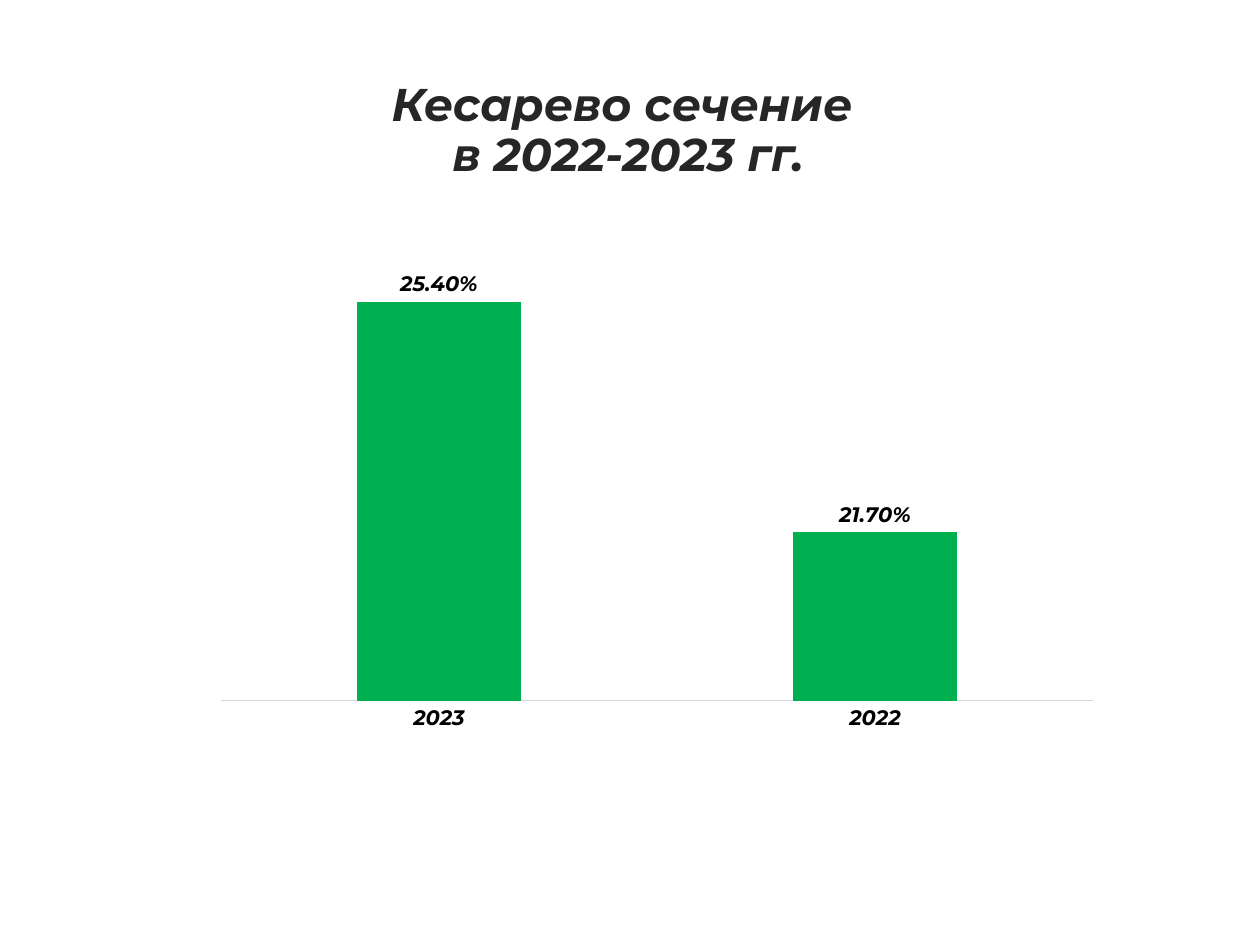
from dataclasses import dataclass

import pptx
import pptx.chart.data
import pptx.dml.color
import pptx.enum.chart
import pptx.enum.text
import pptx.util
from lxml import etree
from pptx.oxml.ns import qn


@dataclass(frozen=True)
class Theme:
    font: str = "Montserrat"
    title_color: str = "262626"
    label_color: str = "000000"
    bar_color: str = "00B050"
    axis_color: str = "D9D9D9"
    title_size: float = 26.2
    label_size: float = 12


@dataclass(frozen=True)
class Box:
    left: float
    top: float
    width: float
    height: float

    def lengths(self) -> list:
        return [pptx.util.Pt(value) for value in (self.left, self.top, self.width, self.height)]


@dataclass(frozen=True)
class YearRate:
    year: str
    rate: float


THEME = Theme()
TITLE_BOX = Box(99.4, 37.4, 519.1, 75.6)
CHART_BOX = Box(115.9, 145.4, 519.1, 277.2)
PLOT_FRACTIONS = {"x": 0.02, "y": 0.02, "w": 0.96, "h": 0.9}
RATES = [YearRate("2023", 0.254), YearRate("2022", 0.217)]


def rgb(color: str) -> pptx.dml.color.RGBColor:
    return pptx.dml.color.RGBColor.from_string(color)


def format_font(font, *, size: float, color: str) -> None:
    font.name = THEME.font
    font.size = pptx.util.Pt(size)
    font.bold = True
    font.italic = True
    font.color.rgb = rgb(color)


def add_text(slide, box: Box, text: str, *, size: float, color: str, line_spacing: float) -> None:
    shape = slide.shapes.add_textbox(*box.lengths())
    frame = shape.text_frame
    frame.word_wrap = True
    frame.vertical_anchor = pptx.enum.text.MSO_ANCHOR.MIDDLE
    paragraph = frame.paragraphs[0]
    paragraph.alignment = pptx.enum.text.PP_ALIGN.CENTER
    paragraph.line_spacing = line_spacing
    for index, line in enumerate(text.split("\n")):
        if index:
            paragraph.add_line_break()
        run = paragraph.add_run()
        run.text = line
        format_font(run.font, size=size, color=color)


def fix_plot_area(chart, fractions: dict) -> None:
    """Place the inner plot area at fixed fractions of the chart."""
    plot_area = chart.plots[0]._element.getparent()
    for old_layout in plot_area.findall(qn("c:layout")):
        plot_area.remove(old_layout)
    layout = etree.Element(qn("c:layout"))
    manual = etree.SubElement(layout, qn("c:manualLayout"))
    settings = {"layoutTarget": "inner", "xMode": "edge", "yMode": "edge", **fractions}
    for name, value in settings.items():
        etree.SubElement(manual, qn(f"c:{name}")).set("val", str(value))
    plot_area.insert(0, layout)


def add_rate_chart(slide, box: Box, rates: list[YearRate]) -> None:
    data = pptx.chart.data.CategoryChartData(number_format="0.00%")
    data.categories = [item.year for item in rates]
    data.add_series("Series 1", [item.rate for item in rates])
    chart = slide.shapes.add_chart(
        pptx.enum.chart.XL_CHART_TYPE.COLUMN_CLUSTERED, *box.lengths(), data
    ).chart
    chart.has_title = False
    chart.has_legend = False
    format_font(chart.font, size=THEME.label_size, color=THEME.label_color)
    fix_plot_area(chart, PLOT_FRACTIONS)

    # Axes
    value_axis = chart.value_axis
    value_axis.minimum_scale = 0.19
    value_axis.maximum_scale = 0.26
    value_axis.has_major_gridlines = False
    value_axis.visible = False
    category_axis = chart.category_axis
    category_axis.major_tick_mark = pptx.enum.chart.XL_TICK_MARK.NONE
    category_axis.format.line.color.rgb = rgb(THEME.axis_color)
    category_axis.format.line.width = pptx.util.Pt(0.75)
    format_font(category_axis.tick_labels.font, size=THEME.label_size, color=THEME.label_color)

    # Columns and their labels
    plot = chart.plots[0]
    plot.gap_width = 167
    plot.vary_by_categories = False
    series = plot.series[0]
    series.format.fill.solid()
    series.format.fill.fore_color.rgb = rgb(THEME.bar_color)
    labels = series.data_labels
    labels.show_value = True
    labels.number_format = "0.00%"
    labels.number_format_is_linked = False
    labels.position = pptx.enum.chart.XL_LABEL_POSITION.OUTSIDE_END
    format_font(labels.font, size=THEME.label_size, color=THEME.label_color)


def main() -> None:
    presentation = pptx.Presentation()
    presentation.slide_width = pptx.util.Pt(720)
    presentation.slide_height = pptx.util.Pt(540)
    slide = presentation.slides.add_slide(presentation.slide_layouts[6])

    # Title
    add_text(
        slide, TITLE_BOX, "Кесарево сечение \nв 2022-2023 гг.",
        size=THEME.title_size, color=THEME.title_color, line_spacing=0.9,
    )

    # Rates by year
    add_rate_chart(slide, CHART_BOX, RATES)
    presentation.save("out.pptx")


if __name__ == "__main__":
    main()
